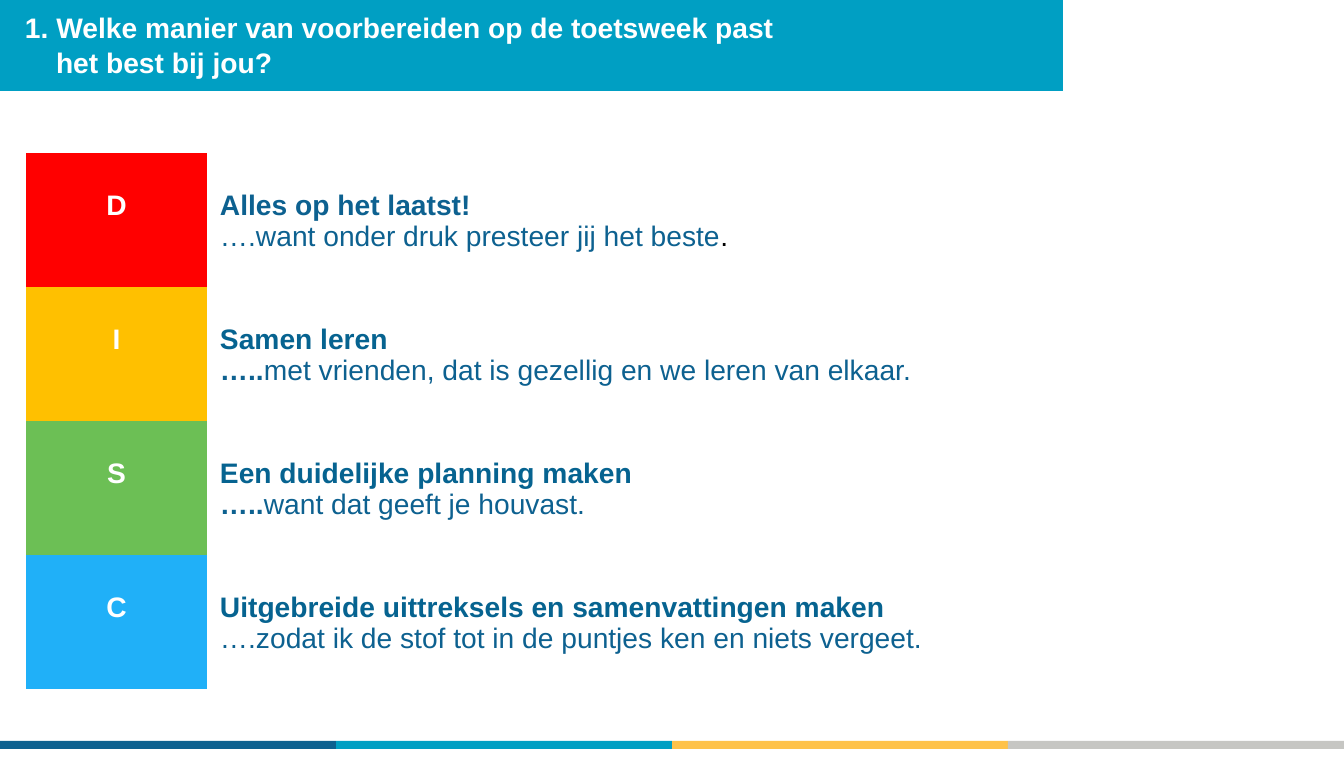
from pptx import Presentation
from pptx.dml.color import RGBColor
from pptx.enum.shapes import MSO_SHAPE
from pptx.enum.text import MSO_ANCHOR, PP_ALIGN
from pptx.util import Pt

RECT = MSO_SHAPE.RECTANGLE
MIDDLE = MSO_ANCHOR.MIDDLE
LEFT, CENTER = PP_ALIGN.LEFT, PP_ALIGN.CENTER

WHITE, BLACK, NAVY, SEA, TEAL = "FFFFFF", "000000", "0D6190", "066390", "009FC3"
TITLE = ["1. Welke manier van voorbereiden op de toetsweek past", "het best bij jou?"]
STRIPES = [NAVY, TEAL, "FEC24A", "C6C6C3"]
# letter, fill, lines of runs: (text, colour, bold)
ROWS = [
    ("D", "FF0000", [
        [("Alles op het laatst!", NAVY, True)],
        [("….want onder druk presteer jij het beste", NAVY, False), (".", BLACK, False)]]),
    ("I", "FFC000", [
        [("Samen leren", SEA, True)],
        [("…..", NAVY, True),
         ("met vrienden, dat is gezellig en we leren van elkaar.", NAVY, False)]]),
    ("S", "6CBF55", [
        [("Een duidelijke planning maken", SEA, True)],
        [("…..", NAVY, True), ("want dat geeft je houvast.", NAVY, False)]]),
    ("C", "20B0F8", [
        [("Uitgebreide uittreksels en samenvattingen maken", SEA, True)],
        [("….zodat ik de stof tot in de puntjes ken en niets vergeet.", NAVY, False)]]),
]
WIDE, HIGH = 1344, 760
COLS, ROW = [181, 1116], 134
PLAIN = "{2D5ABB26-0587-4C30-8999-92F81FD0307C}"  # table style without grid


def px(n):
    return n * 9018


def color(code):
    return RGBColor.from_string(code)


def bar(x, y, w, h, fill):
    box = slide.shapes.add_shape(RECT, px(x), px(y), px(w), px(h))
    box.shadow.inherit = False
    box.fill.solid()
    box.fill.fore_color.rgb = color(fill)
    box.line.fill.background()


def write(para, text, code, bold):
    run = para.add_run()
    run.text = text
    font = run.font
    font.name, font.size, font.bold = "Arial", Pt(20), bold
    font.color.rgb = color(code)


def fill_cell(cell, lines, align):
    cell.margin_left = cell.margin_right = px(13)
    cell.margin_top, cell.margin_bottom = px(37), px(5)
    frame = cell.text_frame
    for i, line in enumerate(lines):
        para = frame.add_paragraph() if i else frame.paragraphs[0]
        para.alignment = align
        for part in line:
            write(para, *part)


deck = Presentation()
deck.slide_width, deck.slide_height = px(WIDE), px(HIGH)
slide = deck.slides.add_slide(deck.slide_layouts[6])

step = WIDE // len(STRIPES)
for i, code in enumerate(STRIPES):
    bar(i * step, 741, step, 8, code)
bar(0, 0, 1063, 91, TEAL)

table = slide.shapes.add_table(
    len(ROWS), 2, px(26), px(153), px(sum(COLS)), px(ROW * len(ROWS))).table
table.first_row = table.horz_banding = False
table._tbl.tblPr[0].text = PLAIN
for col, width in zip(table.columns, COLS):
    col.width = px(width)
for i, (letter, code, lines) in enumerate(ROWS):
    table.rows[i].height = px(ROW)
    key, answer = table.cell(i, 0), table.cell(i, 1)
    key.fill.solid()
    key.fill.fore_color.rgb = color(code)
    answer.fill.background()
    fill_cell(key, [[(letter, WHITE, True)]], CENTER)
    fill_cell(answer, lines, LEFT)

frame = slide.shapes.add_textbox(px(25), px(13), px(1022), px(62)).text_frame
frame.word_wrap = True
frame.vertical_anchor = MIDDLE
frame.margin_left = frame.margin_right = frame.margin_top = frame.margin_bottom = 0
para = frame.paragraphs[0]
para.line_spacing = 1.05
props = para._p.get_or_add_pPr()
props.set("marL", str(px(31)))
props.set("indent", str(px(-31)))
write(para, TITLE[0], WHITE, True)
para.add_line_break()
write(para, TITLE[1], WHITE, True)

deck.save("out.pptx")
